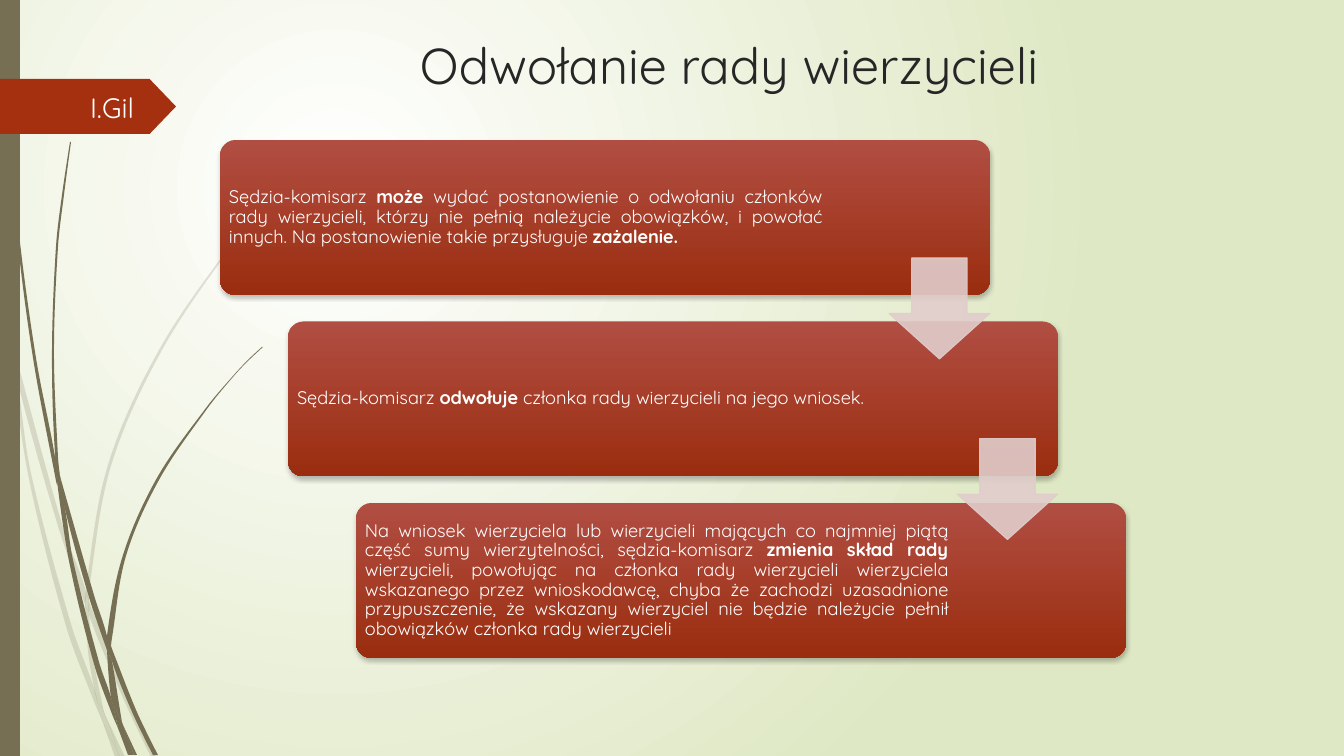
from dataclasses import dataclass
from math import dist

from lxml.etree import SubElement
from pptx import Presentation
from pptx.dml.color import RGBColor
from pptx.enum.shapes import MSO_SHAPE
from pptx.enum.text import MSO_ANCHOR, PP_ALIGN
from pptx.oxml.ns import qn
from pptx.util import Emu, Pt

EMU_PER_PX = 914400 / 100.8
SLIDE_WIDTH, SLIDE_HEIGHT = 1344, 756


@dataclass(frozen=True)
class Theme:
    font: str = "Quicksand"
    title_size: int = 36
    tag_size: int = 20
    body_size: int = 13
    title_color: str = "262626"
    tag_text: str = "FEFFFF"
    body_text: str = "FFFFFF"
    olive: str = "766F54"
    tag_fill: str = "A53010"
    box_gradient: tuple = ("B14E43", "9A2D0F")
    background_gradient: tuple = ("FFFFFF", "DFE8C4")
    arrow: str = "E1CDCC"
    shadow: str = "000000"


THEME = Theme()

# Outline points of every blade of grass, in px.
PALE_BLADES = [
    [(11, 353), (9, 325), (0, 284), (0, 301), (10, 347)],
    [(58, 526), (85, 604), (86, 591), (62, 524), (14, 348), (17, 379)],
    [(93, 612), (89, 601), (89, 615), (124, 700), (151, 757), (156, 757), (128, 698)],
    [(120, 757), (125, 757), (106, 717)],
    [(94, 688), (71, 624), (31, 473), (17, 379), (11, 353), (28, 474), (66, 626), (93, 699),
     (102, 720), (100, 713)],
    [(85, 604), (88, 651), (94, 688), (97, 698), (106, 717), (104, 712), (92, 651), (89, 615)],
    [(89, 589), (111, 466), (161, 352), (231, 247), (270, 200), (292, 176), (314, 155),
     (314, 154), (291, 176), (270, 199), (230, 246), (159, 350), (108, 465), (86, 589), (89, 601)],
    [(102, 720), (115, 757), (120, 757)],
    [(89, 613), (89, 615), (89, 601), (86, 591), (85, 604)],
    [(97, 698), (94, 688), (100, 713), (102, 720), (120, 757), (106, 717)],
]
DARK_BLADES = [
    [(7, 111), (17, 235), (33, 358), (56, 481), (57, 485), (55, 457), (36, 358), (19, 234),
     (8, 110), (5, 48), (4, 0), (3, 0), (4, 48)],
    [(89, 597), (107, 650), (107, 636), (94, 595), (60, 476), (65, 509)],
    [(114, 654), (111, 646), (112, 661), (133, 714), (153, 755), (158, 755), (137, 712)],
    [(111, 697), (99, 662), (73, 560), (65, 509), (57, 481), (69, 561), (94, 664), (112, 714),
     (118, 728), (117, 723)],
    [(60, 476), (58, 457), (54, 352), (58, 247), (64, 195), (71, 142), (70, 142), (62, 195),
     (56, 247), (52, 352), (55, 453)],
    [(134, 755), (137, 755), (123, 725)],
    [(57, 481), (65, 509), (60, 476), (55, 453), (55, 457)],
    [(112, 638), (126, 556), (159, 480), (207, 409), (233, 377), (247, 362), (263, 347),
     (262, 347), (247, 361), (233, 376), (206, 408), (157, 478), (123, 555), (107, 636), (111, 646)],
    [(118, 728), (128, 755), (132, 755)],
    [(107, 650), (111, 697), (117, 712), (123, 725), (122, 722), (112, 661), (110, 656)],
    [(107, 650), (110, 656), (112, 661), (111, 646), (107, 636)],
    [(117, 712), (111, 697), (117, 723), (118, 728), (131, 755), (134, 755), (123, 725)],
]

# Runs of each step: text and whether it is bold.
STEPS = [
    [("Sędzia-komisarz ", False), ("może ", True),
     ("wydać postanowienie o odwołaniu członków rady wierzycieli, którzy nie pełnią "
      "należycie obowiązków, i powołać innych. Na postanowienie takie przysługuje ", False),
     ("zażalenie.", True)],
    [("Sędzia-komisarz ", False), ("odwołuje", True),
     (" członka rady wierzycieli na jego wniosek.", False)],
    [("Na wniosek wierzyciela lub wierzycieli mających co najmniej piątą część sumy "
      "wierzytelności, sędzia-komisarz ", False), ("zmienia skład rady", True),
     (" wierzycieli, powołując na członka rady wierzycieli wierzyciela wskazanego przez "
      "wnioskodawcę, chyba że zachodzi uzasadnione przypuszczenie, że wskazany wierzyciel "
      "nie będzie należycie pełnił obowiązków członka rady wierzycieli", False)],
]


def px(length):
    return Emu(round(length * EMU_PER_PX))


def set_values(target, values):
    for name, value in values.items():
        setattr(target, name, value)


def set_opacity(element, percent):
    for color in element.iter(qn("a:srgbClr")):
        SubElement(color, qn("a:alpha"), val=str(percent * 1000))


def set_solid(shape, color):
    shape.shadow.inherit = False
    shape.fill.solid()
    shape.fill.fore_color.rgb = RGBColor.from_string(color)
    shape.line.fill.background()


def set_gradient(fill, colors):
    fill.gradient()
    for stop, color, position in zip(fill.gradient_stops, colors, (0, 1)):
        stop.color.rgb = RGBColor.from_string(color)
        stop.position = position


def add_preset(slide, kind, box, adjustments=()):
    shape = slide.shapes.add_shape(kind, *map(px, box))
    for index, value in enumerate(adjustments):
        shape.adjustments[index] = value
    return shape


def add_text(slide, box, runs, size, color, align, anchor, margins=(10, 5), line_spacing=None):
    """Add one paragraph; margins are the horizontal and vertical insets."""
    frame = slide.shapes.add_textbox(*map(px, box)).text_frame
    across, down = map(px, margins)
    set_values(frame, {"word_wrap": True, "vertical_anchor": anchor, "margin_left": across,
                       "margin_right": across, "margin_top": down, "margin_bottom": down})
    paragraph = frame.paragraphs[0]
    set_values(paragraph, {"alignment": align, "line_spacing": line_spacing})
    for text, bold in runs:
        run = paragraph.add_run()
        run.text = text
        set_values(run.font, {"name": THEME.font, "size": Pt(size), "bold": bold})
        run.font.color.rgb = RGBColor.from_string(color)


def tangent(before, point, after):
    """Return the unit direction through a point, or zero at a sharp corner."""
    (ax, ay), (bx, by), (cx, cy) = before, point, after
    turn = (bx - ax) * (cx - bx) + (by - ay) * (cy - by)
    if turn < 0.7 * dist(before, point) * dist(point, after):
        return 0, 0
    return (cx - ax) / dist(before, after), (cy - ay) / dist(before, after)


def bend_outline(shape):
    """Turn the straight segments of a closed freeform into smooth curves."""
    points = [(int(p.get("x")), int(p.get("y"))) for p in shape.element.iter(qn("a:pt"))][:-1]
    tangents = [tangent(points[i - 1], point, points[(i + 1) % len(points)])
                for i, point in enumerate(points)]
    for i, segment in enumerate(list(shape.element.iter(qn("a:lnTo")))):
        start, end = points[i], points[(i + 1) % len(points)]
        reach = dist(start, end) / 3
        first = [a + reach * t for a, t in zip(start, tangents[i])]
        second = [a - reach * t for a, t in zip(end, tangents[(i + 1) % len(points)])]
        curve = SubElement(segment.getparent(), qn("a:cubicBezTo"))
        for x, y in (first, second, end):
            SubElement(curve, qn("a:pt"), x=str(round(x)), y=str(round(y)))
        segment.getparent().replace(segment, curve)


def add_blades(slide, blades, opacity):
    for blade in blades:
        points = [(px(x), px(y)) for x, y in blade]
        builder = slide.shapes.build_freeform(*points[0])
        builder.add_line_segments(points[1:] + points[:1], close=True)
        shape = builder.convert_to_shape()
        bend_outline(shape)
        set_solid(shape, THEME.olive)
        set_opacity(shape.element, opacity)


def add_background(slide):
    set_gradient(slide.background.fill, THEME.background_gradient)
    gradient = next(slide.element.iter(qn("a:gradFill")))
    gradient.remove(gradient.find(qn("a:lin")))
    circle = SubElement(gradient, qn("a:path"), {"path": "circle"})
    SubElement(circle, qn("a:fillToRect"), l="50000", t="50000", r="100000", b="100000")


def add_author_tag(slide, box):
    left, top, width, height = box
    set_solid(add_preset(slide, MSO_SHAPE.PENTAGON, box, [0.48]), THEME.tag_fill)
    add_text(slide, (left + 58, top + 8, width - 90, height - 15), [("I.Gil", False)],
             THEME.tag_size, THEME.tag_text, PP_ALIGN.RIGHT, MSO_ANCHOR.MIDDLE)


def add_step(slide, box, runs, text_width):
    left, top, _, height = box
    shape = add_preset(slide, MSO_SHAPE.ROUNDED_RECTANGLE, box, [0.1])
    set_gradient(shape.fill, THEME.box_gradient)
    shape.fill.gradient_angle = 270
    shape.line.fill.background()
    shape.shadow.inherit = False
    shadow = SubElement(next(shape.element.iter(qn("a:effectLst"))), qn("a:outerShdw"),
                        blurRad=str(Pt(3)), dist=str(Pt(2)), dir="5400000", rotWithShape="0")
    SubElement(shadow, qn("a:srgbClr"), val=THEME.shadow)
    set_opacity(shadow, 25)
    add_text(slide, (left + 4, top + 4, text_width, height - 8), runs, THEME.body_size,
             THEME.body_text, PP_ALIGN.JUSTIFY, MSO_ANCHOR.MIDDLE, (5, 5), 0.9)


def add_step_arrow(slide, box):
    arrow = add_preset(slide, MSO_SHAPE.DOWN_ARROW, box, [0.55, 0.45])
    set_solid(arrow, THEME.arrow)
    arrow.line.color.rgb = RGBColor.from_string(THEME.arrow)
    arrow.line.width = Pt(0.75)
    set_opacity(arrow.element, 90)


def add_staircase(slide, box):
    """Place the steps diagonally from the top left to the bottom right of the box."""
    left, top, width, height = box
    step_width, step_height, arrow_size = 770, 155, 101
    gaps = len(STEPS) - 1
    corners = [(left + i * (width - step_width) / gaps, top + i * (height - step_height) / gaps)
               for i in range(len(STEPS))]
    for (x, y), runs, text_width in zip(corners, STEPS, (603, 593, 593)):
        add_step(slide, (x, y, step_width, step_height), runs, text_width)
    for (x, y), drop in zip(corners, (118, 117)):
        add_step_arrow(slide, (x + step_width - arrow_size, y + drop, arrow_size, arrow_size))


def main():
    presentation = Presentation()
    set_values(presentation, {"slide_width": px(SLIDE_WIDTH), "slide_height": px(SLIDE_HEIGHT)})
    slide = presentation.slides.add_slide(presentation.slide_layouts[6])
    add_background(slide)
    add_blades(slide, PALE_BLADES, 20)
    add_blades(slide, DARK_BLADES, 100)
    set_solid(add_preset(slide, MSO_SHAPE.RECTANGLE, (0, 0, 20, SLIDE_HEIGHT)), THEME.olive)
    add_author_tag(slide, (0, 79, 176, 55))
    add_staircase(slide, (220, 140, 906, 518))
    add_text(slide, (410, 29, 766, 97), [("Odwołanie rady wierzycieli", False)],
             THEME.title_size, THEME.title_color, PP_ALIGN.LEFT, MSO_ANCHOR.TOP)
    presentation.save("out.pptx")


if __name__ == "__main__":
    main()
